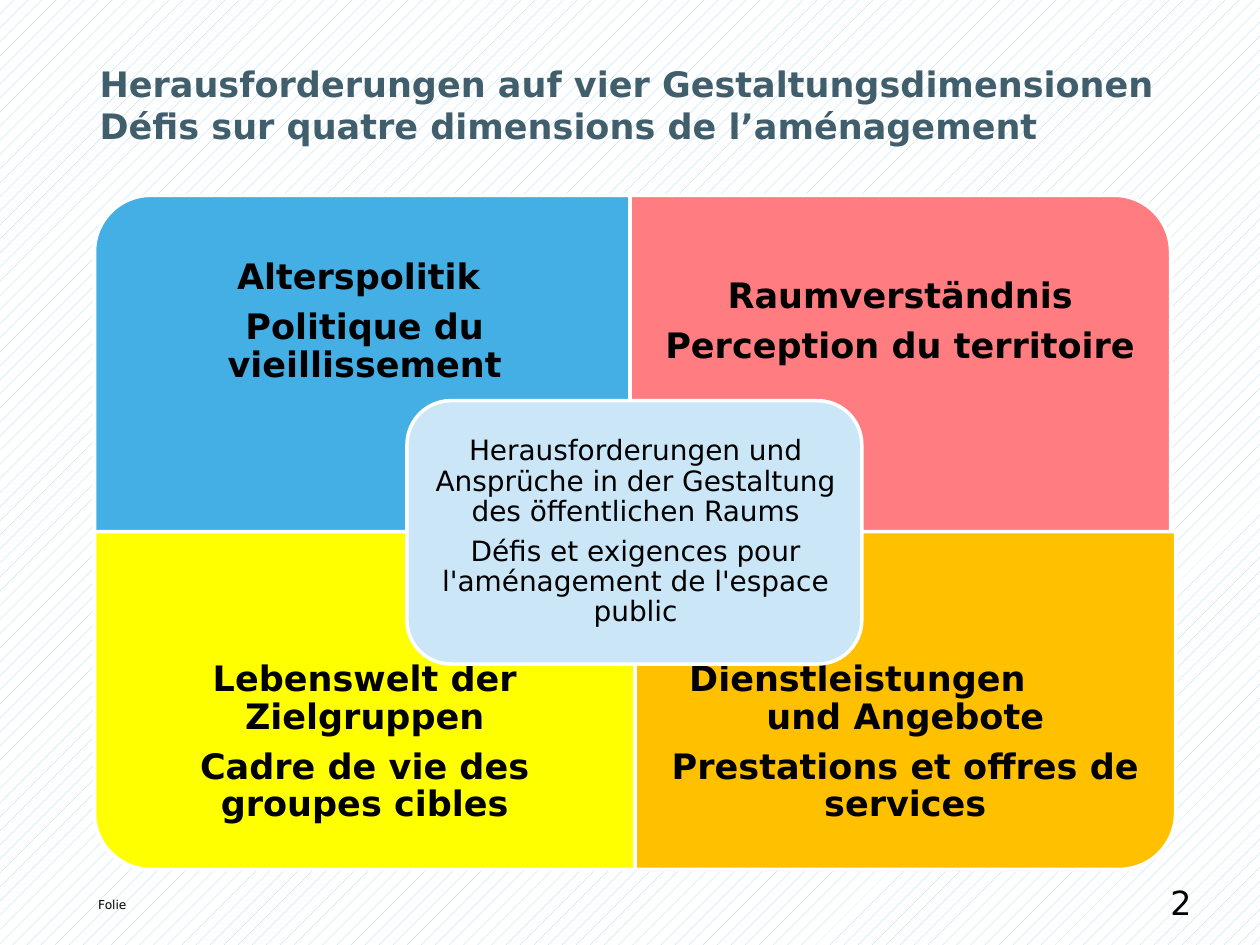
from dataclasses import dataclass

from pptx import Presentation
from pptx.dml.color import RGBColor as Rgb
from pptx.enum.dml import MSO_PATTERN as Pat
from pptx.enum.shapes import MSO_SHAPE as Geo
from pptx.enum.text import MSO_ANCHOR as Anchor, PP_ALIGN as Align
from pptx.util import Inches, Pt

CELL = 0.1  # the slide is a grid of 100 columns by 75 rows
COLS, ROWS = 100, 75
WIDE, HIGH = 42.9, 26.8  # one panel
FACE = "DejaVu Sans"
HEX = {
    "ink": "000000", "white": "FFFFFF", "dots": "9AD4F1", "title": "415E6C",
    "blue": "43AFE5", "red": "FF7C80", "yellow": "FFFF00",
    "orange": "FFC000", "core": "CAE6F7",
}
PLAIN = {"name": FACE, "bold": False}
BOLD = {"name": FACE, "bold": True}
FLOW = {"alignment": Align.CENTER, "line_spacing": 0.9}


@dataclass
class Box:
    col: float
    row: float
    wide: float
    high: float

    def place(self) -> list:
        return [grid(n) for n in (self.col, self.row, self.wide, self.high)]

    def turned(self, angle: int) -> "Box":
        """Give the unrotated frame that fills this box at the angle."""
        if angle % 180 == 0:
            return self
        gap = (self.wide - self.high) / 2
        return Box(self.col + gap, self.row - gap, self.high, self.wide)


@dataclass
class Line:
    text: str
    indent: float = 0  # columns; an indented line is left-aligned
    tight: bool = False  # no space after


@dataclass
class Panel:
    col: float
    row: float
    angle: int
    fill: str
    lines: list[Line]
    drop: float = 0  # rows from panel top to text top


PANELS = [
    Panel(7.5, 15.5, 270, "blue",
          [Line("Alterspolitik "), Line("Politique du vieillissement")]),
    Panel(50, 15.5, 0, "red",
          [Line("Raumverständnis"), Line("Perception du territoire")]),
    Panel(7.5, 42.2, 180, "yellow",
          [Line("Lebenswelt der Zielgruppen"),
           Line("Cadre de vie des groupes cibles")], HIGH / 4),
    Panel(50.4, 42.2, 90, "orange",
          [Line("Dienstleistungen", 2.7, True), Line("und Angebote"),
           Line("Prestations et offres de services")], HIGH / 4),
]
CORE = [
    Line("Herausforderungen und Ansprüche in der Gestaltung "
         "des öffentlichen Raums"),
    Line("Défis et exigences pour l'aménagement de l'espace public"),
]


def grid(cells: float) -> int:
    return Inches(cells * CELL)


def style(item, values: dict) -> None:
    for key, value in values.items():
        setattr(item, key, value)


def ink(font, size: float, look: dict, hue: str = "ink") -> None:
    style(font, {**look, "size": Pt(size)})
    font.color.rgb = Rgb.from_string(HEX[hue])


def pad(frame, cells: float) -> None:
    sides = ("left", "top", "right", "bottom")
    style(frame, {f"margin_{side}": grid(cells) for side in sides})


def block(shapes, geo: Geo, box: Box, fill: str, angle: int = 0) -> None:
    shape = shapes.add_shape(geo, *box.turned(angle).place())
    shape.rotation = angle
    shape.shadow.inherit = False
    shape.fill.solid()
    shape.fill.fore_color.rgb = Rgb.from_string(HEX[fill])
    shape.line.color.rgb = Rgb.from_string(HEX["white"])
    shape.line.width = Pt(2)


def label(shapes, box: Box, lines: list[Line], size: float, look: dict,
          inset: float) -> None:
    frame = shapes.add_textbox(*box.place()).text_frame
    style(frame, {"word_wrap": True, "vertical_anchor": Anchor.MIDDLE})
    pad(frame, inset)
    for i, line in enumerate(lines):
        para = frame.paragraphs[0] if i == 0 else frame.add_paragraph()
        para.text = line.text
        style(para, FLOW)
        para.space_after = Pt(0 if line.tight else 0.35 * size)
        if line.indent:
            para.alignment = Align.LEFT
            para._p.get_or_add_pPr().set("marL", str(grid(line.indent)))
        ink(para.font, size, look)


def note(shapes, box: Box, text: str, size: float, inset: float,
         wrap: bool) -> None:
    frame = shapes.add_textbox(*box.place()).text_frame
    frame.word_wrap = wrap
    pad(frame, inset)
    para = frame.paragraphs[0]
    para.text = text
    ink(para.font, size, PLAIN)


def head(shape) -> None:
    box = Box(7.1, 6.1, 89.3, 9.5).place()
    style(shape, dict(zip(("left", "top", "width", "height"), box)))
    frame = shape.text_frame
    frame.text = ("Herausforderungen auf vier Gestaltungsdimensionen "
                  "Défis sur quatre dimensions de l’aménagement")
    style(frame, {"word_wrap": True, "vertical_anchor": Anchor.BOTTOM})
    pad(frame, 0.8)
    frame.margin_bottom = grid(4)
    para = frame.paragraphs[0]
    para.alignment = Align.LEFT
    ink(para.font, 20, BOLD, "title")


def main() -> None:
    deck = Presentation()
    style(deck, {"slide_width": grid(COLS), "slide_height": grid(ROWS)})
    slide = deck.slides.add_slide(deck.slide_layouts[5])
    back = slide.background.fill
    back.patterned()
    back.pattern = Pat.PERCENT_10
    back.fore_color.rgb = Rgb.from_string(HEX["dots"])
    back.back_color.rgb = Rgb.from_string(HEX["white"])

    head(slide.shapes.title)
    note(slide.shapes, Box(7, 70.6, 29.6, 3), "Folie", 7, 0.8, True)
    group = slide.shapes.add_group_shape().shapes
    for p in PANELS:
        block(group, Geo.ROUND_1_RECTANGLE, Box(p.col, p.row, WIDE, HIGH),
              p.fill, p.angle)
        area = Box(p.col, p.row + p.drop, WIDE, HIGH * 3 / 4)
        label(group, area, p.lines, 20, BOLD, 1.6)
    block(group, Geo.ROUNDED_RECTANGLE, Box(32.3, 31.8, 36.1, 20.9), "core")
    label(group, Box(33.4, 32.8, 34.1, 18.9), CORE, 16, PLAIN, 0.7)
    note(slide.shapes, Box(91.9, 69, 3.7, 4.2), "2", 19, 1, False)
    deck.save("out.pptx")


if __name__ == "__main__":
    main()
